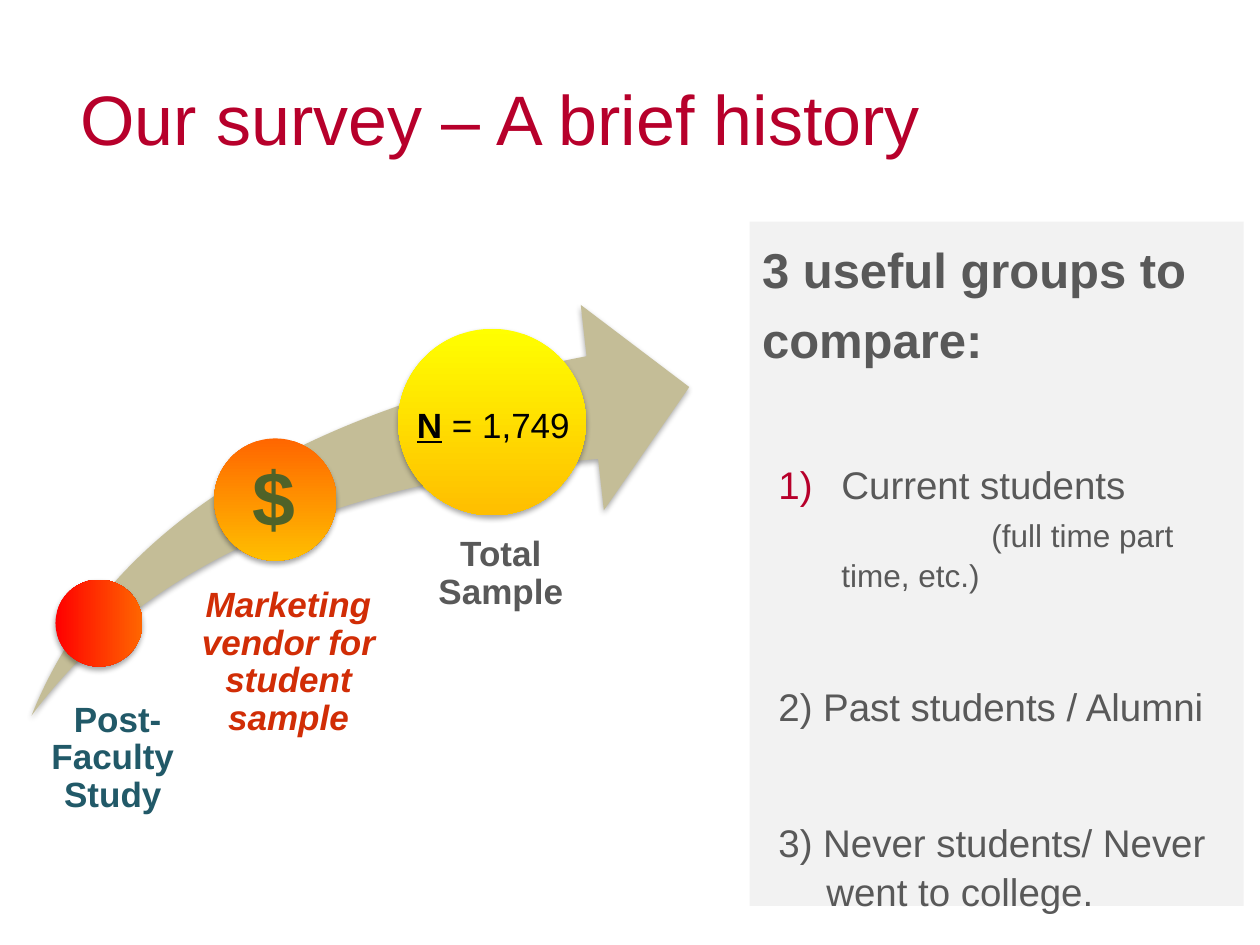
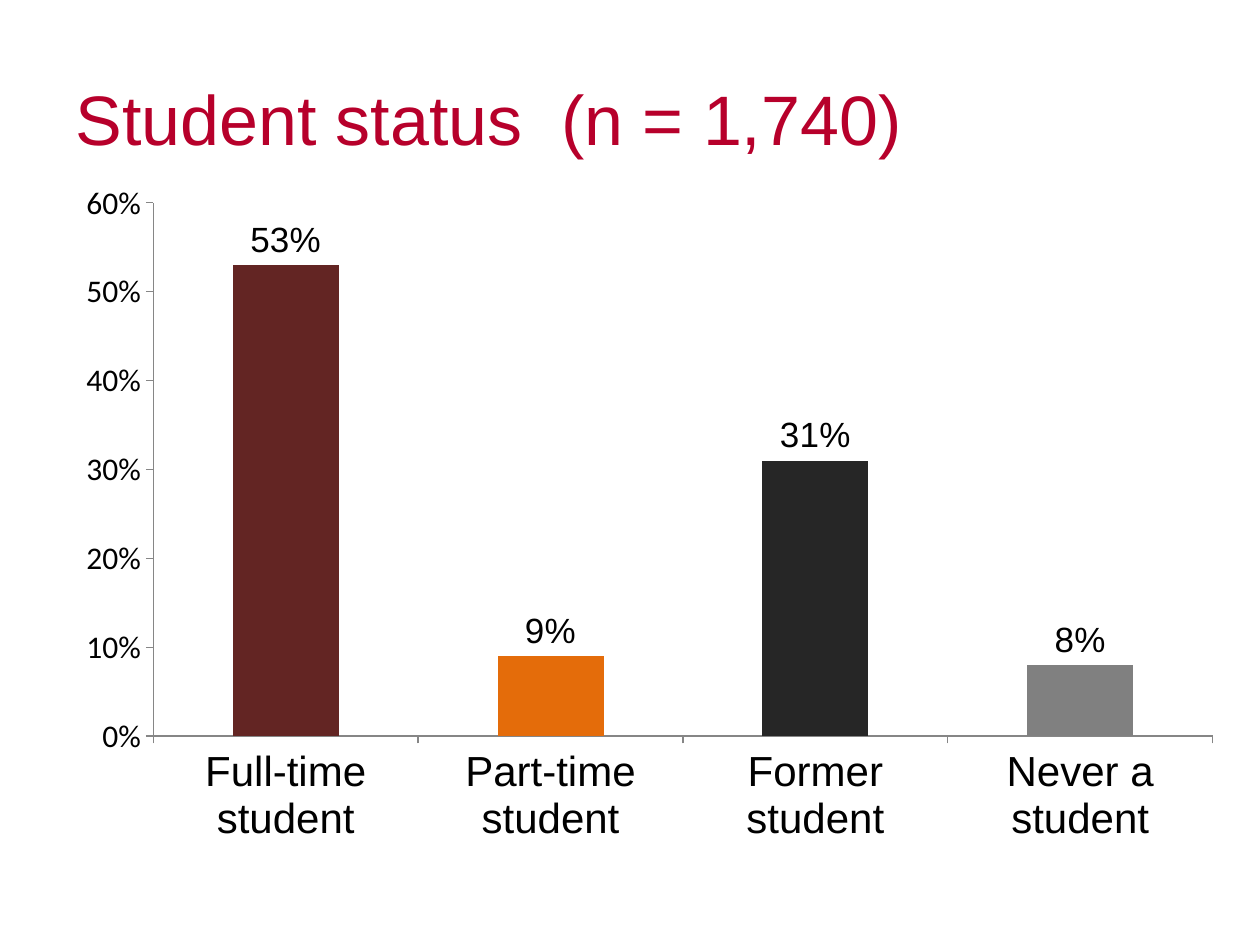
from lxml.etree import SubElement
from pptx import Presentation
from pptx.chart.data import CategoryChartData
from pptx.dml.color import RGBColor
from pptx.enum.chart import XL_CHART_TYPE, XL_LABEL_POSITION, XL_TICK_MARK
from pptx.enum.shapes import MSO_SHAPE
from pptx.enum.text import MSO_ANCHOR, PP_ALIGN
from pptx.oxml.ns import qn
from pptx.util import Pt

PX = 9144  # 100 px to the inch
COLORS = {
    "title": "B7002B", "text": "595959", "panel": "F2F2F2", "arrow": "C4BD97",
    "teal": "215968", "rust": "D12D06", "green": "4F6228", "black": "000000",
    "red": "FF0000", "orange": "FF6600", "amber": "FFBE00", "yellow": "FFFF00",
    "axis": "868686", "maroon": "632523", "pumpkin": "E46C0A",
    "charcoal": "262626", "gray": "808080",
}
RGB = {name: RGBColor.from_string(value) for name, value in COLORS.items()}


def add_text(s, box, text, size, color, bold=False, wrap=True):
    """Add a one-paragraph text box and return its text frame."""
    tf = s.shapes.add_textbox(*[v * PX for v in box]).text_frame
    tf.word_wrap = wrap
    tf.text = text
    font = tf.paragraphs[0].runs[0].font
    font.name, font.size, font.bold = "Arial", Pt(size), bold
    font.color.rgb = RGB[color]
    return tf


def add_shadowed(s, kind, box):
    """Add a borderless preset shape with a soft shadow below it."""
    sp = s.shapes.add_shape(kind, *[v * PX for v in box])
    sp.line.fill.background()
    effects = SubElement(sp._element.spPr, qn("a:effectLst"))
    shadow = SubElement(effects, qn("a:outerShdw"), blurRad="40000",
                        dist="23000", dir="5400000", rotWithShape="0")
    color = SubElement(shadow, qn("a:srgbClr"), val=COLORS["black"])
    SubElement(color, qn("a:alpha"), val="35000")
    return sp


prs = Presentation()
prs.slide_width, prs.slide_height = 1000 * PX, 750 * PX

slides = []
for left, title in [(54, "Our survey – A brief history"),
                    (50, "Student status  (n = 1,740)")]:
    s = prs.slides.add_slide(prs.slide_layouts[6])
    tf = add_text(s, (left, 63, 892, 72), title, 40, "title")
    tf.vertical_anchor = MSO_ANCHOR.MIDDLE
    tf.paragraphs[0].line_spacing = Pt(40)
    slides.append(s)
history, status = slides

# Panel of groups
panel = history.shapes.add_shape(MSO_SHAPE.RECTANGLE, 595 * PX, 176 * PX, 392 * PX, 543 * PX)
panel.shadow.inherit = False
panel.fill.solid()
panel.fill.fore_color.rgb = RGB["panel"]
panel.line.fill.background()
tf = panel.text_frame
tf.word_wrap = True
tf.vertical_anchor = MSO_ANCHOR.TOP

# text, size, left margin, first-line indent, space before, line spacing
groups = [
    ("3 useful groups to compare:", 28, 0, 0, 0, Pt(40)),
    ("Current students", 22, 63, -50, 52, 1.05),
    ("(full time part time, etc.)", 18, 63, 119, 4, 1.05),
    ("2) Past students / Alumni", 22, 51, -38, 50, 1.05),
    ("3) Never students/ Never went to college.", 22, 51, -38, 50, 1.05),
]
tf.text = "\n".join(group[0] for group in groups)
for p, (text, size, margin, indent, before, spacing) in zip(tf.paragraphs, groups):
    p.alignment = PP_ALIGN.LEFT
    p.space_before = Pt(before)
    p.line_spacing = spacing
    pPr = p._p.get_or_add_pPr()
    pPr.set("marL", str(margin * PX))
    pPr.set("indent", str(indent * PX))
    font = p.runs[0].font
    font.name, font.size, font.bold = "Arial", Pt(size), size == 28
    font.color.rgb = RGB["text"]

pPr = tf.paragraphs[1]._p.pPr
bullet_color = SubElement(pPr, qn("a:buClr"))
SubElement(bullet_color, qn("a:srgbClr"), val=COLORS["title"])
SubElement(pPr, qn("a:buFont"), typeface="Arial")
SubElement(pPr, qn("a:buAutoNum"), type="arabicParenR")

# Growth arrow with its three stages
arrow = add_shadowed(history, MSO_SHAPE.SWOOSH_ARROW, (25, 242, 522, 326))
arrow.adjustments[0] = arrow.adjustments[1] = 0.25
arrow.fill.solid()
arrow.fill.fore_color.rgb = RGB["arrow"]

# circle, gradient ends, gradient angle, label box, left inset, label, colour
stages = [
    ((44, 460, 69, 69), ("red", "orange"), 0,
     (25, 557, 122, 94), 7, " Post-Faculty Study", "teal"),
    ((170, 348, 97, 97), ("orange", "amber"), 270,
     (140, 466, 165, 177), 13, "Marketing vendor for student sample", "rust"),
    ((316, 261, 149, 148), ("yellow", "amber"), 270,
     (311, 426, 155, 66), 18, "Total Sample", "text"),
]
for circle, ends, angle, box, inset, label, color in stages:
    sp = add_shadowed(history, MSO_SHAPE.OVAL, circle)
    sp.fill.gradient()
    sp.fill.gradient_angle = angle
    for stop, end in zip(sp.fill.gradient_stops, ends):
        stop.color.rgb = RGB[end]
    tf = add_text(history, box, label, 20, color, bold=True)
    tf.margin_left = inset * PX
    tf.margin_top = tf.margin_right = tf.margin_bottom = 0
    p = tf.paragraphs[0]
    p.alignment = PP_ALIGN.CENTER
    p.line_spacing = 0.9
    p.runs[0].font.italic = color == "rust"

tf = add_text(history, (321, 315, 175, 44), "N", 20, "black", bold=True)
tf.paragraphs[0].runs[0].font.underline = True
r = tf.paragraphs[0].add_run()
r.text = " = 1,749"
r.font.name, r.font.size = "Arial", Pt(20)
r.font.color.rgb = RGB["black"]
add_text(history, (191, 352, 57, 84), "$", 44, "green", bold=True, wrap=False)

# Student status chart
data = CategoryChartData(number_format="0%")
data.categories = ["Full-time student", "Part-time student",
                   "Former student", "Never a student"]
data.add_series("Series 1", (0.53, 0.09, 0.31, 0.08))
chart = status.shapes.add_chart(XL_CHART_TYPE.COLUMN_CLUSTERED, 50 * PX, 135 * PX,
                                931 * PX, 545 * PX, data).chart
chart.has_legend = False
chart.has_title = False
chart.font.name, chart.font.size = "Calibri", Pt(18)
chart.font.color.rgb = RGB["black"]

for axis in (chart.category_axis, chart.value_axis):
    axis.has_major_gridlines = False
    axis.major_tick_mark = XL_TICK_MARK.OUTSIDE
    axis.minor_tick_mark = XL_TICK_MARK.NONE
    axis.format.line.color.rgb = RGB["axis"]
    axis.format.line.width = Pt(0.75)
chart.value_axis.minimum_scale = 0
chart.value_axis.maximum_scale = 0.6
chart.value_axis.major_unit = 0.1
chart.value_axis.tick_labels.number_format = "0%"
chart.value_axis.tick_labels.number_format_is_linked = False

plot = chart.plots[0]
plot.gap_width = 150
plot.vary_by_categories = False
plot.has_data_labels = True
labels = plot.data_labels
labels.show_value = True
labels.number_format = "0%"
labels.number_format_is_linked = False
labels.position = XL_LABEL_POSITION.OUTSIDE_END
for font, size in [(labels.font, 20), (chart.category_axis.tick_labels.font, 24)]:
    font.name, font.size = "Arial", Pt(size)
    font.color.rgb = RGB["black"]

for i, color in enumerate(["maroon", "pumpkin", "charcoal", "gray"]):
    fill = plot.series[0].points[i].format.fill
    fill.solid()
    fill.fore_color.rgb = RGB[color]

prs.save("out.pptx")
